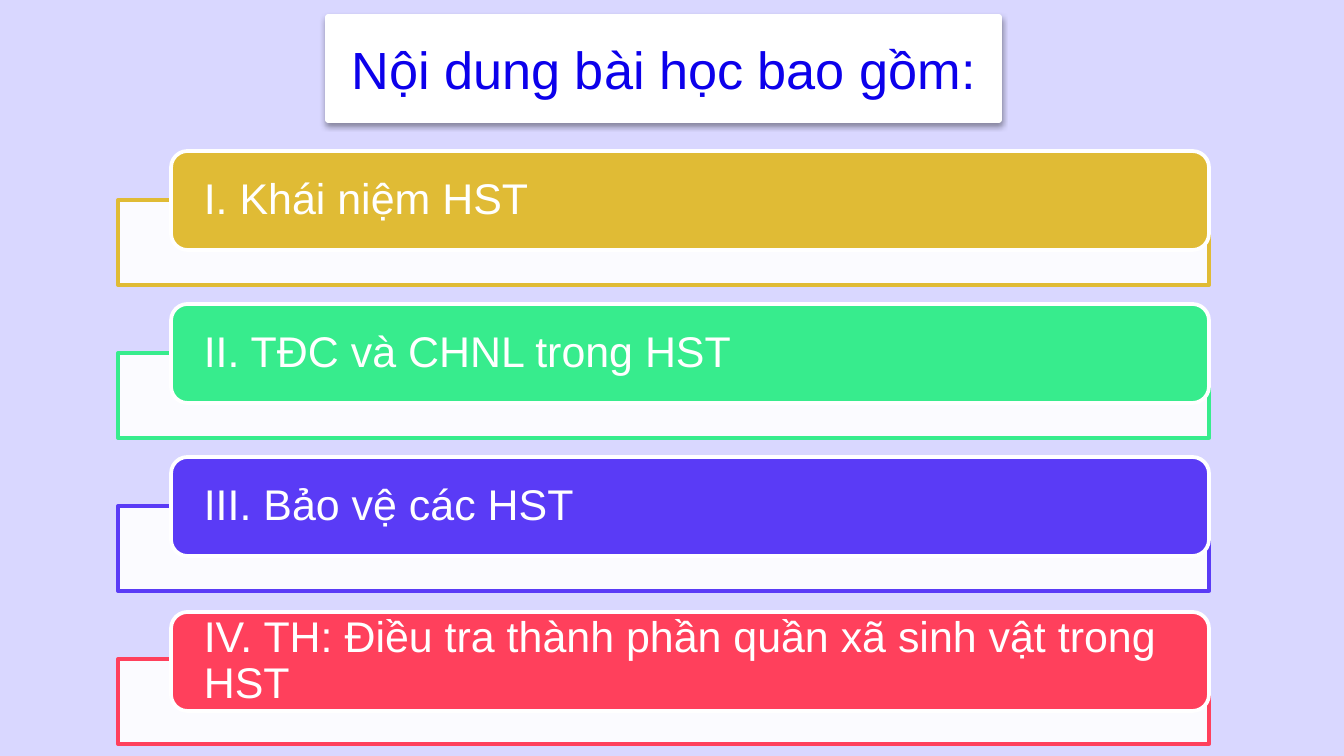
from dataclasses import dataclass

from lxml import etree
from pptx import Presentation
from pptx.dml.color import RGBColor
from pptx.enum.shapes import MSO_SHAPE
from pptx.enum.text import MSO_ANCHOR, MSO_AUTO_SIZE, PP_ALIGN
from pptx.oxml import parse_xml
from pptx.oxml.ns import nsdecls, qn
from pptx.util import Pt

RECTANGLE = MSO_SHAPE.RECTANGLE
ROUNDED = MSO_SHAPE.ROUNDED_RECTANGLE
MIDDLE = MSO_ANCHOR.MIDDLE
NO_AUTOFIT = MSO_AUTO_SIZE.NONE
LEFT, CENTER = PP_ALIGN.LEFT, PP_ALIGN.CENTER

EMU_PER_PX = 914400 / 134.4
FONT = "Arial"
TITLE_ONLY = 5

LAVENDER = RGBColor(0xD9, 0xD7, 0xFF)
WHITE = RGBColor(0xFF, 0xFF, 0xFF)
BLUE = RGBColor(0x0C, 0x00, 0xEB)
GOLD = RGBColor(0xE0, 0xBB, 0x35)
GREEN = RGBColor(0x37, 0xEC, 0x8D)
VIOLET = RGBColor(0x5A, 0x3B, 0xF6)
RED = RGBColor(0xFF, 0x40, 0x5C)


@dataclass(frozen=True)
class Box:
    left: int
    top: int
    width: int
    height: int

    def emu(self) -> list[int]:
        return [px(n) for n in (self.left, self.top, self.width, self.height)]


@dataclass(frozen=True)
class Section:
    heading: str
    color: RGBColor
    tab_drop: int = 0


SECTIONS = [
    Section("I. Khái niệm HST", GOLD),
    Section("II. TĐC và CHNL trong HST", GREEN),
    Section("III. Bảo vệ các HST", VIOLET),
    Section("IV. TH: Điều tra thành phần quần xã sinh vật trong HST", RED, tab_drop=2),
]
SECTION_PITCH = 153
FIRST_FRAME_TOP = 200
FIRST_TAB_TOP = 151
TAB_INSET = 28
TITLE_BOX = Box(328, 17, 671, 103)


def px(length: int) -> int:
    return round(length * EMU_PER_PX)


def paint(shape, fill: RGBColor, line: RGBColor, line_width: int) -> None:
    shape.fill.solid()
    shape.fill.fore_color.rgb = fill
    shape.line.color.rgb = line
    shape.line.width = Pt(line_width)


def write(shape, text: str, size: int, color: RGBColor, align, inset: int,
          spacing: float) -> None:
    frame = shape.text_frame
    frame.word_wrap = True
    frame.auto_size = NO_AUTOFIT
    frame.vertical_anchor = MIDDLE
    frame.margin_left = frame.margin_right = px(inset)
    frame.margin_top = frame.margin_bottom = 0
    paragraph = frame.paragraphs[0]
    paragraph.alignment = align
    paragraph.line_spacing = spacing
    run = paragraph.add_run()
    run.text = text
    run.font.name = FONT
    run.font.size = Pt(size)
    run.font.color.rgb = color


def add_panel(slide, kind, box: Box, fill: RGBColor, line: RGBColor):
    panel = slide.shapes.add_shape(kind, *box.emu())
    panel.shadow.inherit = False
    paint(panel, fill, line, 2)
    return panel


def add_section(slide, section: Section, index: int) -> None:
    offset = index * SECTION_PITCH
    frame_box = Box(118, FIRST_FRAME_TOP + offset, 1091, 85)
    frame = add_panel(slide, RECTANGLE, frame_box, WHITE, section.color)
    fill_color = frame.fill._xPr.find(qn("a:solidFill"))[0]
    etree.SubElement(fill_color, qn("a:alpha"), val="90000")

    tab_box = Box(171, FIRST_TAB_TOP + offset + section.tab_drop, 1038, 99)
    tab = add_panel(slide, ROUNDED, tab_box, section.color, WHITE)
    write(tab, section.heading, 23, WHITE, LEFT, TAB_INSET, 0.9)


def format_title(title) -> None:
    """Turn the title placeholder into a rounded white card with a soft shadow."""
    title.left, title.top, title.width, title.height = TITLE_BOX.emu()
    properties = title._element.spPr
    properties.append(parse_xml(
        f'<a:prstGeom {nsdecls("a")} prst="roundRect"><a:avLst/></a:prstGeom>'))
    paint(title, WHITE, WHITE, 3)
    properties.append(parse_xml(
        f'<a:effectLst {nsdecls("a")}>'
        f'<a:outerShdw blurRad="{Pt(3.1)}" dist="{Pt(1.6)}" dir="5400000" rotWithShape="0">'
        '<a:srgbClr val="000000"><a:alpha val="38000"/></a:srgbClr>'
        '</a:outerShdw></a:effectLst>'))
    write(title, "Nội dung bài học bao gồm:", 28, BLUE, CENTER, 7, 1.0)


def main() -> None:
    deck = Presentation()
    deck.slide_width, deck.slide_height = px(1344), px(756)
    slide = deck.slides.add_slide(deck.slide_layouts[TITLE_ONLY])
    slide.background.fill.solid()
    slide.background.fill.fore_color.rgb = LAVENDER
    format_title(slide.shapes.title)
    for index, section in enumerate(SECTIONS):
        add_section(slide, section, index)
    deck.save("out.pptx")


if __name__ == "__main__":
    main()
